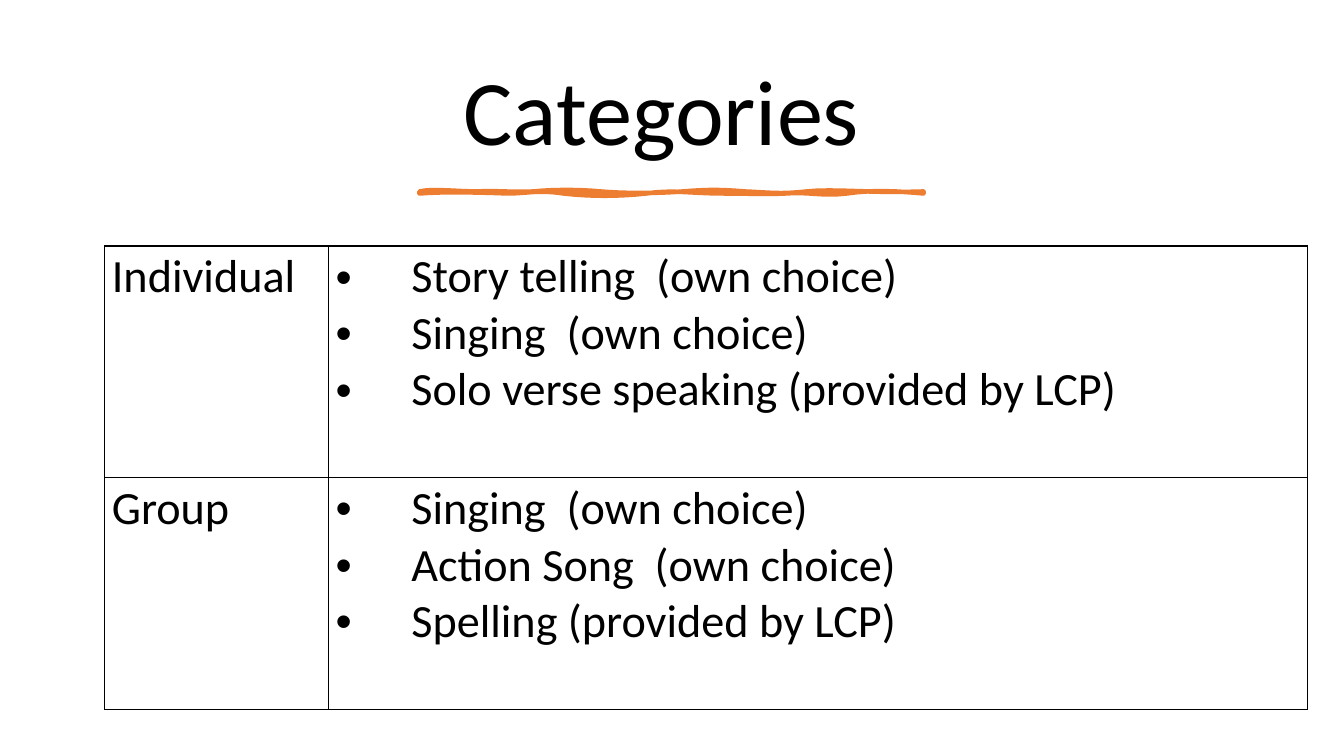
from lxml import etree
from pptx import Presentation, util as u
from pptx.dml.color import RGBColor
from pptx.enum import text
from pptx.oxml.ns import qn

W, H = 13.33, 7.5
COLORS = {"ink": "000000", "accent": "ED7D31"}
FONT = "Calibri"
CATEGORIES = {
    "Individual": ["Story telling  (own choice)", "Singing  (own choice)",
                   "Solo verse speaking (provided by LCP)"],
    "Group": ["Singing  (own choice)", "Action Song  (own choice)",
              "Spelling (provided by LCP)"],
}
# Bézier points of the brush stroke, as offsets in inches from its left end
TOP_EDGE = [(0, 0), (.12, -.03), (.38, 0), (.57, 0), (.76, -.01), (.93, .01),
            (1.13, 0), (1.33, -.02), (1.58, -.02), (1.8, 0), (2.01, .02),
            (2.37, .02), (2.61, 0), (2.86, -.02), (2.98, -.02), (3.23, 0),
            (3.47, .01), (3.58, .03), (3.84, 0), (4.1, -.03), (4.51, .02), (5, 0)]
BOTTOM_EDGE = [(5, .02), (4.79, 0), (4.49, -.02), (4.24, .02), (3.99, .05),
               (3.85, 0), (3.63, .02), (3.4, .03), (3.31, .02), (3.01, .02),
               (2.71, .02), (2.51, -.02), (2.25, .02), (1.98, .05), (1.69, .05),
               (1.43, .02), (1.18, -.02), (1.07, .02), (.87, .02), (.67, .01),
               (.22, 0), (0, .02)]


def rgb(name):
    return RGBColor.from_string(COLORS[name])


def write(p, words, size=33, color="ink", align=None, spacing=None):
    p.alignment, p.line_spacing = align, spacing
    r = p.add_run()
    r.text = words
    r.font.size, r.font.name = u.Pt(size), FONT
    r.font.color.rgb = rgb(color)


def add_bullet(p, indent=0.75):
    pPr = p._p.get_or_add_pPr()
    pPr.set("marL", str(u.Inches(indent)))
    pPr.set("indent", str(-u.Inches(indent)))
    etree.SubElement(pPr, qn("a:buFont"), typeface="Arial")
    etree.SubElement(pPr, qn("a:buChar"), char="•")


def add_borders(cell, color="ink", width=1):
    tcPr = cell._tc.get_or_add_tcPr()
    for side in ("lnL", "lnR", "lnT", "lnB"):
        ln = etree.SubElement(tcPr, qn(f"a:{side}"), w=str(u.Pt(width)))
        fill = etree.SubElement(ln, qn("a:solidFill"))
        etree.SubElement(fill, qn("a:srgbClr"), val=COLORS[color])


def sample_curve(points, steps=8):
    """Return points along a chain of cubic Bézier curves."""
    curve = [points[0]]
    for i in range(0, len(points) - 1, 3):
        for k in range(1, steps + 1):
            t = k / steps
            weights = ((1 - t) ** 3, 3 * t * (1 - t) ** 2, 3 * t * t * (1 - t), t ** 3)
            curve.append(tuple(sum(w * p[axis] for w, p in zip(weights, points[i:i + 4]))
                               for axis in (0, 1)))
    return curve


def add_title(s, x, y, w, h):
    tf = s.shapes.add_textbox(*map(u.Inches, (x, y, w, h))).text_frame
    tf.word_wrap = True
    tf.vertical_anchor = text.MSO_ANCHOR.MIDDLE
    write(tf.paragraphs[0], "Categories ", size=66,
          align=text.PP_ALIGN.CENTER, spacing=0.9)


def add_brush_stroke(s, x, y):
    outline = [(u.Inches(x + dx), u.Inches(y + dy))
               for dx, dy in sample_curve(TOP_EDGE) + sample_curve(BOTTOM_EDGE)]
    builder = s.shapes.build_freeform(*outline[0])
    builder.add_line_segments(outline[1:], close=True)
    sp = builder.convert_to_shape()
    sp.shadow.inherit = False
    sp.fill.solid()
    sp.fill.fore_color.rgb = sp.line.color.rgb = rgb("accent")
    sp.line.width = u.Pt(3.25)


def add_categories(s, x, y, w, h, label_width=2.22):
    table = s.shapes.add_table(len(CATEGORIES), 2, *map(u.Inches, (x, y, w, h))).table
    table.first_row = table.horz_banding = False
    for col, width in zip(table.columns, (label_width, w - label_width)):
        col.width = u.Inches(width)
    for row, (label, items) in enumerate(CATEGORIES.items()):
        for col, lines in enumerate(([label], items)):
            cell = table.cell(row, col)
            add_borders(cell)
            cell.fill.background()
            cell.margin_left = cell.margin_right = u.Inches(0.07)
            cell.margin_top = cell.margin_bottom = u.Inches(0.03)
            tf = cell.text_frame
            for i, line in enumerate(lines):
                p = tf.add_paragraph() if i else tf.paragraphs[0]
                write(p, line)
                if col == 1:
                    add_bullet(p)


def main():
    prs = Presentation()
    prs.slide_width, prs.slide_height = u.Inches(W), u.Inches(H)
    s = prs.slides.add_slide(prs.slide_layouts[6])
    add_title(s, 0.7, 0.46, 11.93, 1.37)
    add_brush_stroke(s, 4.16, 1.9)
    add_categories(s, 1.04, 2.44, 11.93, 4.6)
    prs.save("out.pptx")


if __name__ == "__main__":
    main()
